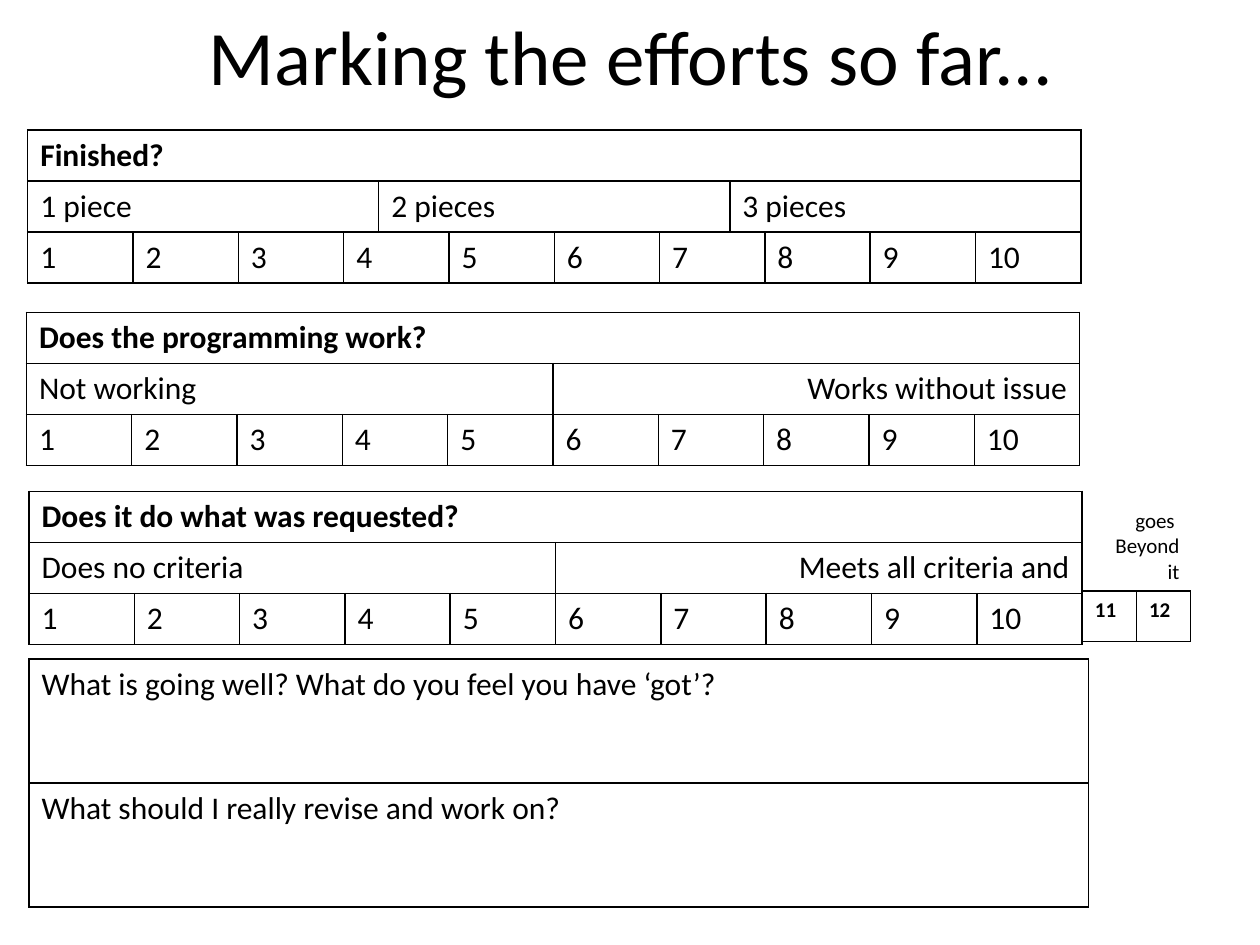
from math import lcm

from lxml.etree import SubElement
from pptx import Presentation
from pptx.dml.color import RGBColor
from pptx.enum.text import MSO_ANCHOR, MSO_AUTO_SIZE, PP_ALIGN
from pptx.oxml import parse_xml
from pptx.oxml.ns import nsdecls, qn
from pptx.util import Inches, Pt

BLACK = RGBColor(0, 0, 0)
FONT = "Calibri"
TITLE = "Marking the efforts so far..."
MARKS = [str(mark) for mark in range(1, 11)]

# Each table: left, top, width, height, text size, bold first row, rows of equal cells
TABLES = [
    (0.22, 1.03, 8.36, 1.21, 18, True,
     [["Finished?"], ["1 piece", "2 pieces", "3 pieces"], MARKS]),
    (0.21, 2.48, 8.36, 1.21, 18, True,
     [["Does the programming work?"], ["Not working", "Works without issue"], MARKS]),
    (0.23, 3.9, 8.36, 1.21, 18, True,
     [["Does it do what was requested?"], ["Does no criteria", "Meets all criteria and"], MARKS]),
    (0.23, 5.23, 8.41, 1.97, 18, False,
     [["What is going well? What do you feel you have ‘got’?"],
      ["What should I really revise and work on?"]]),
    (8.59, 4.69, 0.86, 0.4, 12, True, [["11", "12"]]),
]
RIGHT_ALIGNED = {"Works without issue", "Meets all criteria and"}
BONUS_LINES = ["goes ", "Beyond", "it"]


def write(para, text, size, bold=False, align=PP_ALIGN.LEFT):
    para.alignment = align
    span = para.add_run()
    span.text = text
    for name, value in {"name": FONT, "size": Pt(size), "bold": bold}.items():
        setattr(span.font, name, value)
    span.font.color.rgb = BLACK


def outline(cell):
    """Clear the cell's fill and rule its four sides in black."""
    cell.fill.background()
    properties = cell._tc.get_or_add_tcPr()
    for index, side in enumerate(("lnL", "lnR", "lnT", "lnB")):
        line = parse_xml(f'<a:{side} {nsdecls("a")} w="{Pt(1)}"/>')
        SubElement(SubElement(line, qn("a:solidFill")), qn("a:srgbClr"), val=str(BLACK))
        properties.insert(index, line)


def add_grid(page, left, top, width, height, size, bold_first, rows):
    """Split every row equally; the columns are the union of all the rows' cell edges."""
    units = lcm(*(len(row) for row in rows))
    edges = sorted({i * units // len(row) for row in rows for i in range(len(row) + 1)})
    table = page.shapes.add_table(
        len(rows), len(edges) - 1, *map(Inches, (left, top, width, height))).table
    table.first_row = table.horz_banding = False
    for column, start, end in zip(table.columns, edges, edges[1:]):
        column.width = Inches(width * (end - start) / units)
    for row in table.rows:
        row.height = Inches(height / len(rows))
    for cell in table.iter_cells():
        outline(cell)
    for r, row in enumerate(rows):
        step = units // len(row)
        for i, text in enumerate(row):
            first, last = edges.index(i * step), edges.index((i + 1) * step) - 1
            cell = table.cell(r, first)
            if last > first:
                cell.merge(table.cell(r, last))
            align = PP_ALIGN.RIGHT if text in RIGHT_ALIGNED else PP_ALIGN.LEFT
            write(cell.text_frame.paragraphs[0], text, size, bold_first and r == 0, align)


def main():
    deck = Presentation()
    deck.slide_width, deck.slide_height = Inches(10), Inches(7.5)
    page = deck.slides.add_slide(deck.slide_layouts[5])

    title = page.shapes.title
    title.left, title.top, title.width, title.height = map(Inches, (0.51, -0.19, 9, 1.25))
    title.text_frame.vertical_anchor = MSO_ANCHOR.MIDDLE
    write(title.text_frame.paragraphs[0], TITLE, 44, align=PP_ALIGN.CENTER)

    for table in TABLES:
        add_grid(page, *table)

    frame = page.shapes.add_textbox(*map(Inches, (8.75, 3.98, 0.71, 0.71))).text_frame
    frame.word_wrap = False
    frame.auto_size = MSO_AUTO_SIZE.SHAPE_TO_FIT_TEXT
    for i, line in enumerate(BONUS_LINES):
        para = frame.add_paragraph() if i else frame.paragraphs[0]
        write(para, line, 12, align=PP_ALIGN.RIGHT)

    deck.save("out.pptx")


if __name__ == "__main__":
    main()
